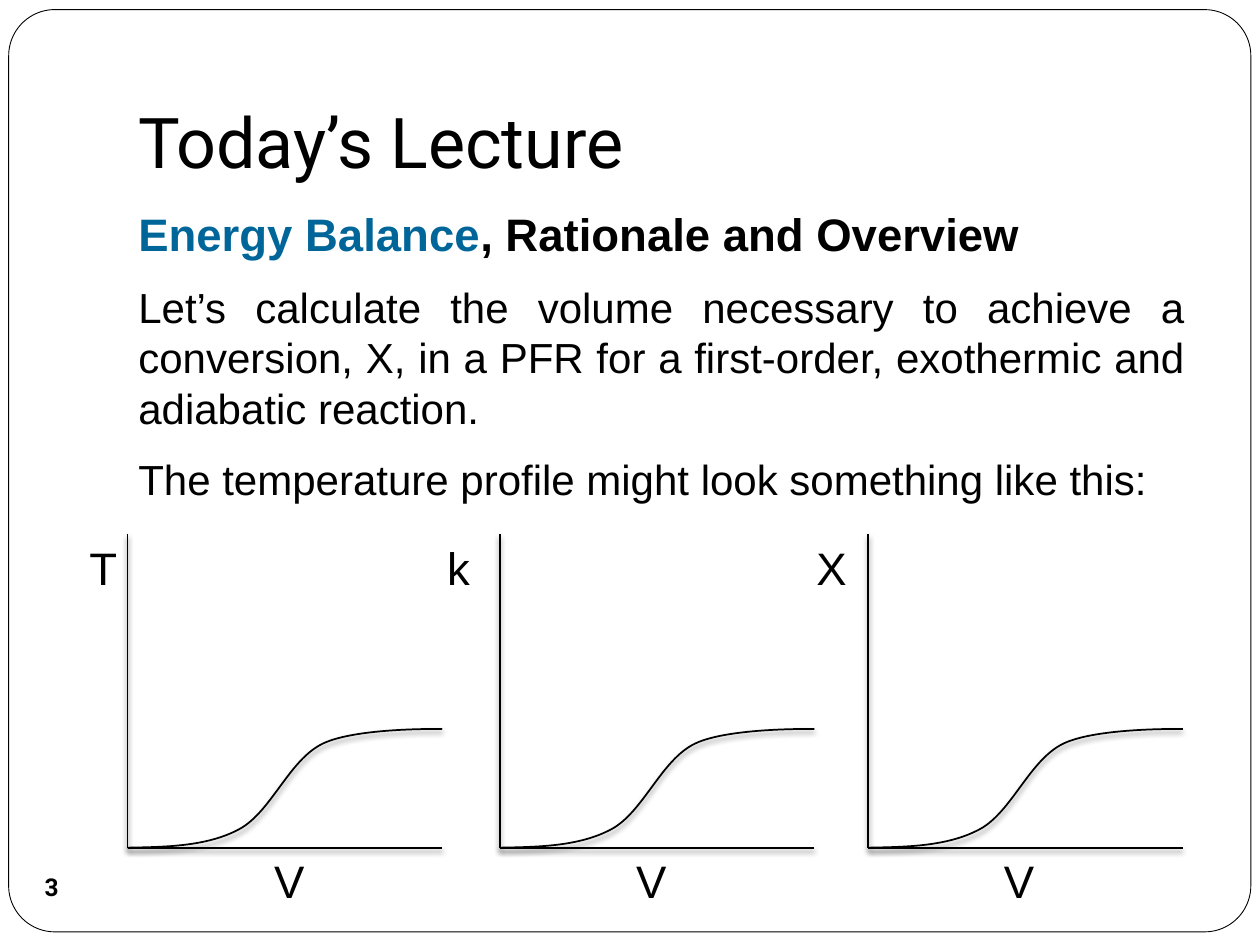
from lxml.etree import SubElement
from pptx import Presentation
from pptx.dml.color import RGBColor
from pptx.enum.shapes import MSO_CONNECTOR, MSO_SHAPE
from pptx.enum.text import MSO_ANCHOR, PP_ALIGN
from pptx.oxml.ns import qn
from pptx.util import Pt

# Content
TITLE = "Today’s Lecture"
HEADING = [("Energy Balance", "accent"), (", Rationale and Overview", "ink")]
BODY = [
    "Let’s calculate the volume necessary to achieve a conversion, X, in a PFR "
    "for a first-order, exothermic and adiabatic reaction.",
    "The temperature profile might look something like this:",
]
PAGE_NUMBER = "3"
# Axis label, left of plot, left of axis label box, left of "V" box
PLOTS = [("T", 72.9, 44, 149.6), ("k", 285.6, 248.4, 356.4), ("X", 496.1, 459.4, 566.6)]

# S-curve relative to the plot's origin: three Bezier segments,
# each with two control points and an end point
CURVE = [
    (22.3, -0.4), (45.4, -0.7), (63.7, -10.5),
    (82.1, -20.3), (92.2, -50.2), (111.6, -59.5),
    (131, -68.8), (179.8, -67.8), (179.8, -67.8),
]
PLOT_TOP, PLOT_BOTTOM, PLOT_WIDTH = 305, 484.4, 179.8
LABEL_TOP, VOLUME_TOP, LABEL_SIZE = 305.3, 484, (36.7, 38.9)

THEME = {
    "ink": RGBColor(0, 0, 0), "accent": RGBColor(0x00, 0x66, 0x99),
    "paper": RGBColor(255, 255, 255),
    "display": "Roboto", "text": "Arial",
    "title": 40, "heading": 26, "body": 24, "label": 26, "number": 14,
}


def set_font(font, family, size, bold=False, color="ink"):
    font.name, font.size, font.bold = THEME[family], Pt(THEME[size]), bold
    font.color.rgb = THEME[color]


def add_box(parent, left, top, width, height):
    box = parent.shapes.add_textbox(Pt(left), Pt(top), Pt(width), Pt(height))
    box.text_frame.word_wrap = True
    return box.text_frame


def add_label(parent, text, left, top):
    para = add_box(parent, left, top, *LABEL_SIZE).paragraphs[0]
    para.text = text
    set_font(para.font, "text", "label")


def style_stroke(shape):
    """Thin black line with a soft shadow below it."""
    shape.line.color.rgb = THEME["ink"]
    shape.line.width = Pt(1)
    effects = SubElement(shape._element.spPr, qn("a:effectLst"))
    shadow = SubElement(effects, qn("a:outerShdw"), blurRad=str(Pt(3)),
                        dist=str(Pt(2)), dir="5400000", rotWithShape="0")
    color = SubElement(shadow, qn("a:srgbClr"), val=str(THEME["ink"]))
    SubElement(color, qn("a:alpha"), val="50000")


def add_curve(parent, left):
    builder = parent.shapes.build_freeform(Pt(left), Pt(PLOT_BOTTOM))
    builder.add_line_segments(
        [(Pt(left + x), Pt(PLOT_BOTTOM + y)) for x, y in CURVE], close=False)
    curve = builder.convert_to_shape()
    # Every three points become one Bezier segment
    lines = list(curve._element.iter(qn("a:lnTo")))
    outline = lines[0].getparent()
    for index, line in enumerate(lines):
        if index % 3 == 0:
            segment = SubElement(outline, qn("a:cubicBezTo"))
        segment.append(line[0])
        outline.remove(line)
    curve.fill.background()
    style_stroke(curve)


def add_plot(page, label, left, label_left, volume_left):
    group = page.shapes.add_group_shape()
    origin = (left, PLOT_BOTTOM)
    for start, end in [((left, PLOT_TOP), origin),
                       (origin, (left + PLOT_WIDTH, PLOT_BOTTOM))]:
        axis = group.shapes.add_connector(
            MSO_CONNECTOR.STRAIGHT, *map(Pt, start + end))
        style_stroke(axis)
    add_curve(group, left)
    add_label(group, label, label_left, LABEL_TOP)
    add_label(group, "V", volume_left, VOLUME_TOP)


def main():
    deck = Presentation()
    deck.slide_width, deck.slide_height = Pt(720), Pt(540)
    page = deck.slides.add_slide(deck.slide_layouts[6])

    # Rounded frame
    frame = page.shapes.add_shape(MSO_SHAPE.ROUNDED_RECTANGLE,
                                  Pt(5), Pt(5.5), Pt(709.8), Pt(527))
    frame.adjustments[0] = 0.05
    frame.shadow.inherit = False
    frame.fill.solid()
    frame.fill.fore_color.rgb = THEME["paper"]
    frame.line.color.rgb = THEME["ink"]
    frame.line.width = Pt(0.5)

    # Title
    title = add_box(page, 72, 21.6, 612, 90)
    title.vertical_anchor = MSO_ANCHOR.BOTTOM
    title.margin_bottom = Pt(7.2)
    title.text = TITLE
    set_font(title.paragraphs[0].font, "display", "title")

    # Page number
    badge = page.shapes.add_shape(MSO_SHAPE.OVAL, Pt(11.5), Pt(489), Pt(36), Pt(36))
    badge.shadow.inherit = False
    badge.fill.background()
    badge.line.fill.background()
    number = badge.text_frame
    number.margin_left = number.margin_right = 0
    number.margin_top = number.margin_bottom = 0
    number.word_wrap = False
    number.vertical_anchor = MSO_ANCHOR.MIDDLE
    number.text = PAGE_NUMBER
    number.paragraphs[0].alignment = PP_ALIGN.CENTER
    set_font(number.paragraphs[0].font, "display", "number", bold=True)

    # Heading and body
    body = add_box(page, 72, 114, 612, 360)
    heading = body.paragraphs[0]
    heading.space_before = Pt(5.8)
    for text, color in HEADING:
        span = heading.add_run()
        span.text = text
        set_font(span.font, "text", "heading", bold=True, color=color)
    for text in BODY:
        para = body.add_paragraph()
        para.text = text
        para.alignment = PP_ALIGN.JUSTIFY
        para.space_before = Pt(12)
        set_font(para.font, "text", "body")

    # Profiles along the reactor volume
    for plot in PLOTS:
        add_plot(page, *plot)

    deck.save("out.pptx")


if __name__ == "__main__":
    main()
